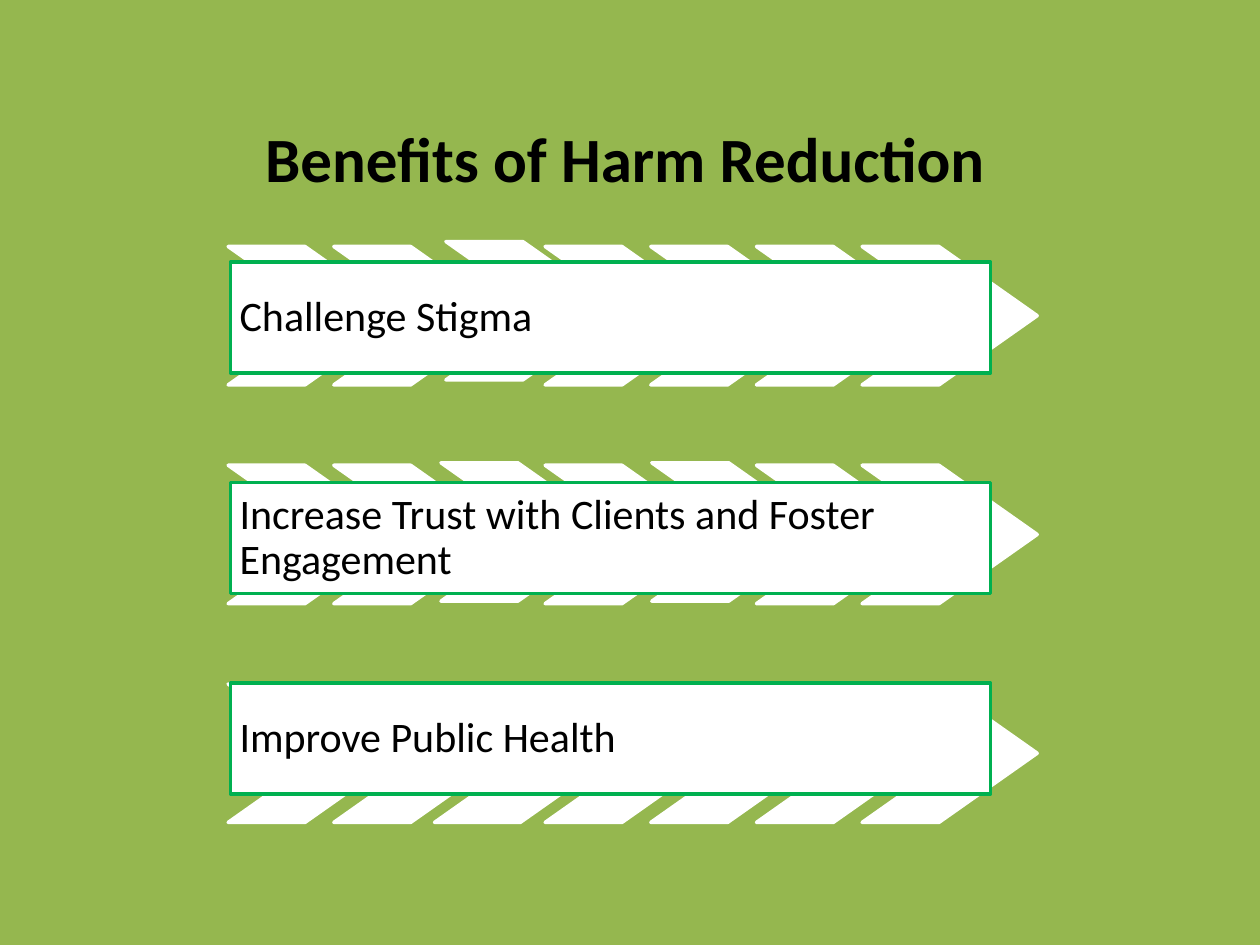
"""Build the slide on the benefits of harm reduction."""
import pptx
import pptx.util
import pptx.dml.color
import pptx.enum.shapes
import pptx.enum.text

Cm = pptx.util.Cm
Pt = pptx.util.Pt
Kind = pptx.enum.shapes.MSO_SHAPE
Align = pptx.enum.text.PP_ALIGN
Anchor = pptx.enum.text.MSO_ANCHOR
HUES = {"back": "95B74F", "white": "FFFFFF", "edge": "00B050", "text": "000000"}


def hue(name):
    return pptx.dml.color.RGBColor.from_string(HUES[name])


def block(kind, left, top, width, height, edge):
    shape = slide.shapes.add_shape(kind, Cm(left), Cm(top), Cm(width), Cm(height))
    shape.shadow.inherit = False
    shape.fill.solid()
    shape.fill.fore_color.rgb = hue("white")
    shape.line.color.rgb = hue(edge)
    shape.line.width = Pt(2)
    return shape


deck = pptx.Presentation()
deck.slide_width, deck.slide_height = Cm(25.4), Cm(19.05)
slide = deck.slides.add_slide(deck.slide_layouts[5])
slide.background.fill.solid()
slide.background.fill.fore_color.rgb = hue("back")

title = slide.shapes.title
title.left, title.top, title.width, title.height = Cm(1.07), Cm(2.11), Cm(23.06), Cm(2.11)
title.text_frame.text = "Benefits of Harm Reduction"
title.text_frame.vertical_anchor = Anchor.MIDDLE
head = title.text_frame.paragraphs[0]
head.alignment = Align.CENTER
head.font.name = "Calibri"
head.font.size = Pt(36)
head.font.bold = True
head.font.color.rgb = hue("text")

rows = [
    ("Challenge Stigma", 5.28),
    ("Increase Trust with Clients and Foster Engagement", 9.73),
    ("Improve Public Health", 13.77),
]
shifts = {(0, 2): (0.13, -0.1, 0), (1, 2): (0.03, -0.05, 0),
          (1, 4): (0.02, -0.05, 0), (2, 2): (-0.1, 0, 0.18)}

for row, (words, top) in enumerate(rows):
    for col in range(7):
        right, down, extra = shifts.get((row, col), (0, 0, 0))
        arrow = block(Kind.CHEVRON, 4.6 + 2.13 * col + right, 4.97 + 4.41 * row + down,
                      3.53 + extra, 2.79, "white")
        arrow.adjustments[0] = 0.71

    label = block(Kind.RECTANGLE, 4.65, top, 15.32, 2.24, "edge")
    frame = label.text_frame
    frame.word_wrap = True
    frame.vertical_anchor = Anchor.MIDDLE
    frame.margin_left = frame.margin_right = Cm(0.18)
    frame.margin_top = frame.margin_bottom = Cm(0.18)
    frame.text = words
    para = frame.paragraphs[0]
    para.alignment = Align.LEFT
    para.line_spacing = 0.9
    para.font.name = "Calibri"
    para.font.size = Pt(24)
    para.font.color.rgb = hue("text")

deck.save("out.pptx")
